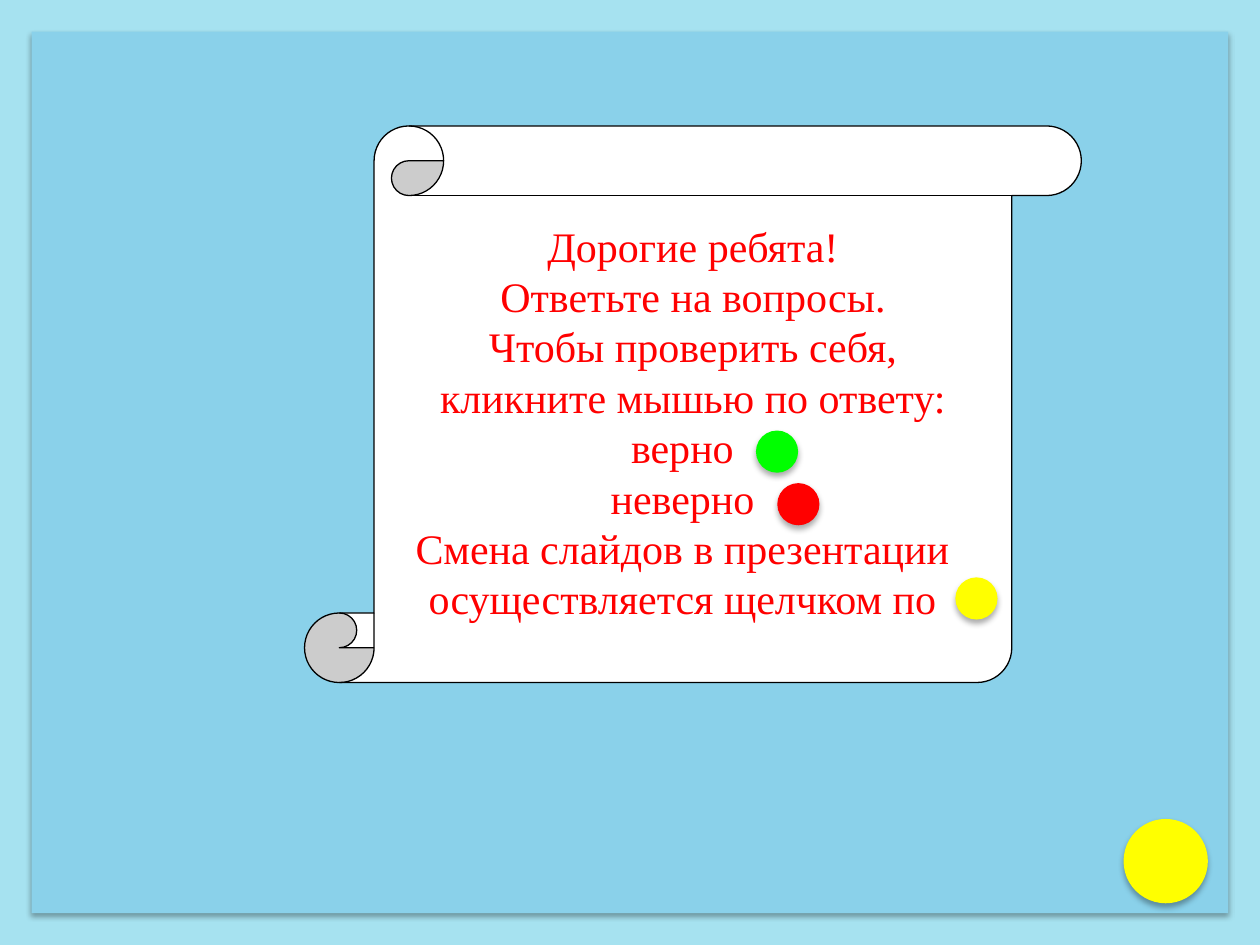
from lxml import etree
from pptx import Presentation
from pptx.dml.color import RGBColor
from pptx.enum.shapes import MSO_SHAPE
from pptx.enum.text import MSO_ANCHOR, PP_ALIGN
from pptx.oxml import parse_xml
from pptx.oxml.ns import nsdecls
from pptx.util import Cm, Pt

PALE_BLUE = RGBColor(0xA6, 0xE2, 0xF0)
SKY_BLUE = RGBColor(0x8A, 0xD1, 0xEA)
WHITE = RGBColor(0xFF, 0xFF, 0xFF)
BLACK = RGBColor(0, 0, 0)
RED = RGBColor(0xFF, 0, 0)
GREEN = RGBColor(0, 0xFF, 0)
YELLOW = RGBColor(0xFF, 0xFF, 0)

SHADOW = (
    f'<a:effectLst {nsdecls("a")}>'
    '<a:outerShdw blurRad="44450" dist="27940" dir="5400000" algn="ctr" rotWithShape="0">'
    '<a:srgbClr val="000000"><a:alpha val="32000"/></a:srgbClr>'
    '</a:outerShdw></a:effectLst>'
)

# Each line of the message with the space kept free for a dot on its right.
MESSAGE = [
    ("Дорогие ребята!", 0),
    ("Ответьте на вопросы.", 0),
    ("Чтобы проверить себя,", 0),
    ("кликните мышью по ответу:", 0),
    ("верно", Pt(12)),
    ("неверно", Pt(12)),
    ("Смена слайдов в презентации осуществляется щелчком по", Pt(12)),
]
DOT_SIZE = Cm(0.85)


def add_shadowed_shape(slide, kind, left, top, width, height, color):
    shape = slide.shapes.add_shape(kind, left, top, width, height)
    shape.fill.solid()
    shape.fill.fore_color.rgb = color
    shape.line.fill.background()
    shape._element.spPr.append(parse_xml(SHADOW))
    return shape


def add_background(slide, width, height):
    margin = Cm(0.64)
    add_shadowed_shape(slide, MSO_SHAPE.RECTANGLE, 0, 0, width, height, PALE_BLUE)
    add_shadowed_shape(slide, MSO_SHAPE.RECTANGLE, margin, margin,
                       width - 2 * margin, height - 2 * margin, SKY_BLUE)


def add_dot(slide, left, top, size, color):
    add_shadowed_shape(slide, MSO_SHAPE.OVAL, left, top, size, size, color)


def add_message_scroll(slide, left, top, width, height):
    scroll = slide.shapes.add_shape(MSO_SHAPE.VERTICAL_SCROLL, left, top, width, height)
    scroll.shadow.inherit = False
    scroll.fill.solid()
    scroll.fill.fore_color.rgb = WHITE
    scroll.line.color.rgb = BLACK
    scroll.line.width = Pt(0.75)

    text_frame = scroll.text_frame
    text_frame.word_wrap = True
    text_frame.vertical_anchor = MSO_ANCHOR.MIDDLE
    for index, (text, right_indent) in enumerate(MESSAGE):
        paragraph = text_frame.add_paragraph() if index else text_frame.paragraphs[0]
        paragraph.text = text
        paragraph.alignment = PP_ALIGN.CENTER
        paragraph._p.get_or_add_pPr().set("marR", str(int(right_indent)))
        paragraph.font.name = "Times New Roman"
        paragraph.font.size = Pt(24)
        paragraph.font.color.rgb = RED

    add_dot(slide, left + Cm(13.12), top + Cm(9.1), DOT_SIZE, YELLOW)
    add_dot(slide, left + Cm(9.1), top + Cm(6.14), DOT_SIZE, GREEN)
    add_dot(slide, left + Cm(9.53), top + Cm(7.2), DOT_SIZE, RED)


def main():
    presentation = Presentation()
    presentation.slide_width = Cm(25.4)
    presentation.slide_height = Cm(19.05)
    slide = presentation.slides.add_slide(presentation.slide_layouts[6])
    add_background(slide, presentation.slide_width, presentation.slide_height)
    add_dot(slide, Cm(22.65), Cm(16.51), Cm(1.7), YELLOW)
    add_message_scroll(slide, Cm(6.14), Cm(2.54), Cm(15.66), Cm(11.22))
    presentation.save("out.pptx")


if __name__ == "__main__":
    main()
